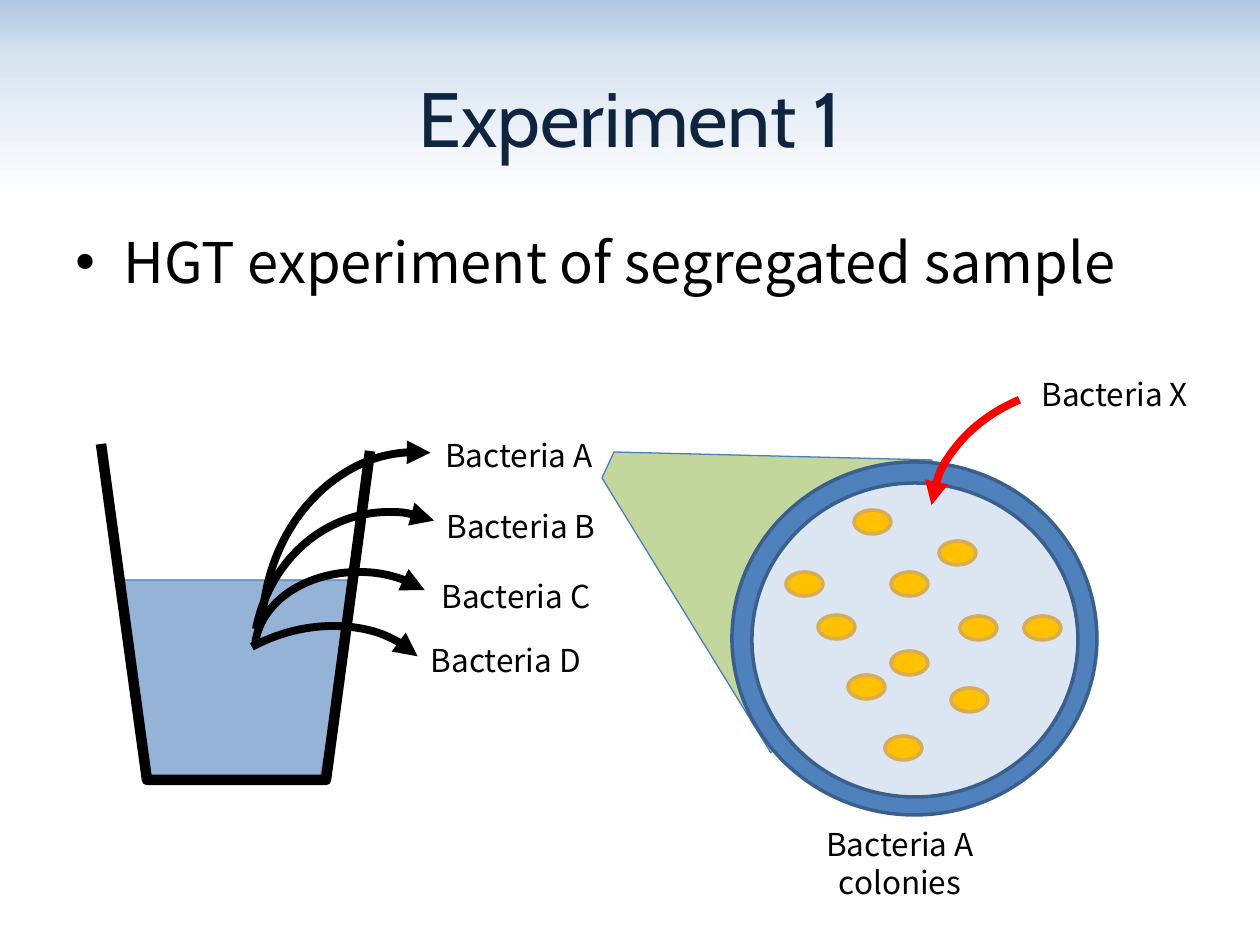
from copy import deepcopy

from lxml.etree import SubElement
from pptx import Presentation
from pptx.dml.color import RGBColor
from pptx.enum.shapes import MSO_SHAPE
from pptx.enum.text import MSO_ANCHOR, PP_ALIGN
from pptx.oxml.ns import qn
from pptx.util import Emu, Pt

SCALE = 914400 / 126
BODY_FONT = "Noto Sans CJK KR"
LABEL = {"size": Pt(18), "name": BODY_FONT}
BACKDROP = [(0, "B0C6E1"), (0.06, "D8E3F0"), (0.21, "FFFFFF")]
COLONIES = [
    (854, 510), (786, 572), (891, 572), (885, 736), (848, 675), (939, 541),
    (951, 688), (818, 615), (891, 651), (1024, 616), (960, 616),
]
BACTERIA = [
    ("Bacteria A", 420, 430),
    ("Bacteria B", 422, 501),
    ("Bacteria C", 417, 571),
    ("Bacteria D", 407, 635),
]
SAMPLING_ARCS = [
    ((262, 452, 310, 360), (159.41, 211.59), 0),
    ((255, 572, 207, 156), (133.26, 214.19), 0),
    ((253, 512, 271, 296), (151.12, 208.12), 0),
    ((212, 597, 200, 265), (172.03, 10.78), 72),
]


def px(value):
    return Emu(round(value * SCALE))


def color(value):
    return RGBColor.from_string(value)


def paint(shape, fill, line, width):
    shape.shadow.inherit = False
    if fill:
        shape.fill.solid()
        shape.fill.fore_color.rgb = color(fill)
    else:
        shape.fill.background()
    shape.line.color.rgb = color(line)
    shape.line.width = Pt(width)


def set_backdrop(page):
    fill = page.background.fill
    fill.gradient()
    fill.gradient_angle = 270
    first = next(page._element.iter(qn("a:gs")))
    first.addnext(deepcopy(first))
    for stop, (position, value) in zip(fill.gradient_stops, BACKDROP):
        stop.position = position
        stop.color.rgb = color(value)


def add_text(page, text, place, font, ink="000000", align=PP_ALIGN.CENTER,
             anchor=MSO_ANCHOR.TOP):
    box = page.shapes.add_textbox(*map(px, place))
    box.text_frame.word_wrap = True
    box.text_frame.vertical_anchor = anchor
    para = box.text_frame.paragraphs[0]
    para.alignment = align
    span = para.add_run()
    span.text = text
    span.font.color.rgb = color(ink)
    for name, value in font.items():
        setattr(span.font, name, value)
    return para


def add_bullet(para, indent):
    properties = para._p.get_or_add_pPr()
    properties.set("marL", str(px(indent)))
    properties.set("indent", str(-px(indent)))
    SubElement(properties, qn("a:buFont")).set("typeface", "Arial")
    SubElement(properties, qn("a:buChar")).set("char", "•")


def add_ellipse(page, place, fill, line):
    ellipse = page.shapes.add_shape(MSO_SHAPE.OVAL, *map(px, place))
    paint(ellipse, fill, line, 2)


def add_outline(page, points, fill, line, width, close=True):
    corners = [(px(x), px(y)) for x, y in points]
    builder = page.shapes.build_freeform(*corners[0])
    builder.add_line_segments(corners[1:], close=close)
    paint(builder.convert_to_shape(), fill, line, width)


def add_arc_arrow(page, place, angles, line, rotation=0, flip=False):
    arc = page.shapes.add_shape(MSO_SHAPE.ARC, *map(px, place))
    for index, angle in enumerate(angles):
        arc.adjustments[index] = angle
    arc.rotation = rotation
    paint(arc, None, line, 4.5)
    if flip:
        arc._element.spPr.find(qn("a:xfrm")).set("flipH", "1")
    stroke = arc._element.spPr.find(qn("a:ln"))
    SubElement(stroke, qn("a:headEnd")).set("type", "triangle")


def add_dish(page):
    callout = [(602, 478), (771, 753), (932, 460), (614, 452)]
    add_outline(page, callout, "C3D69B", "4B7EBC", 0.75)
    add_ellipse(page, (732, 462, 365, 353), "4F81BD", "3A5F8C")
    add_ellipse(page, (752, 483, 326, 314), "DCE6F2", "3A5F8C")
    for x, y in COLONIES:
        add_ellipse(page, (x, y, 37, 24), "FFC000", "D6AC58")
    add_text(page, "Bacteria A colonies", (801, 819, 198, 89), LABEL)


def add_beaker(page):
    water = [(123, 580), (150, 780), (320, 780), (353, 588), (353, 580)]
    glass = [(101, 444), (147, 780), (326, 780), (370, 451)]
    add_outline(page, water, "95B3D7", "4B7EBC", 0.75)
    add_outline(page, glass, None, "000000", 6, close=False)
    for place, angles, rotation in SAMPLING_ARCS:
        add_arc_arrow(page, place, angles, "000000", rotation, flip=True)
    for name, x, y in BACTERIA:
        add_text(page, name, (x, y, 198, 50), LABEL)


def main():
    deck = Presentation()
    deck.slide_width, deck.slide_height = px(1260), px(945)
    page = deck.slides.add_slide(deck.slide_layouts[6])
    set_backdrop(page)
    add_text(page, "Experiment 1", (63, 38, 1134, 158),
             {"size": Pt(44), "name": "Cabin"}, "0F243E",
             anchor=MSO_ANCHOR.MIDDLE)
    body = add_text(page, "HGT experiment of segregated sample",
                    (63, 221, 1134, 624), {"size": Pt(32), "name": BODY_FONT},
                    align=PP_ALIGN.LEFT)
    add_bullet(body, 48)
    add_dish(page)
    add_beaker(page)
    add_text(page, "Bacteria X", (1029, 369, 231, 50), LABEL,
             align=PP_ALIGN.LEFT)
    add_arc_arrow(page, (931, 383, 345, 265), (110.07, 140.4), "FF0000")
    deck.save("out.pptx")


if __name__ == "__main__":
    main()
